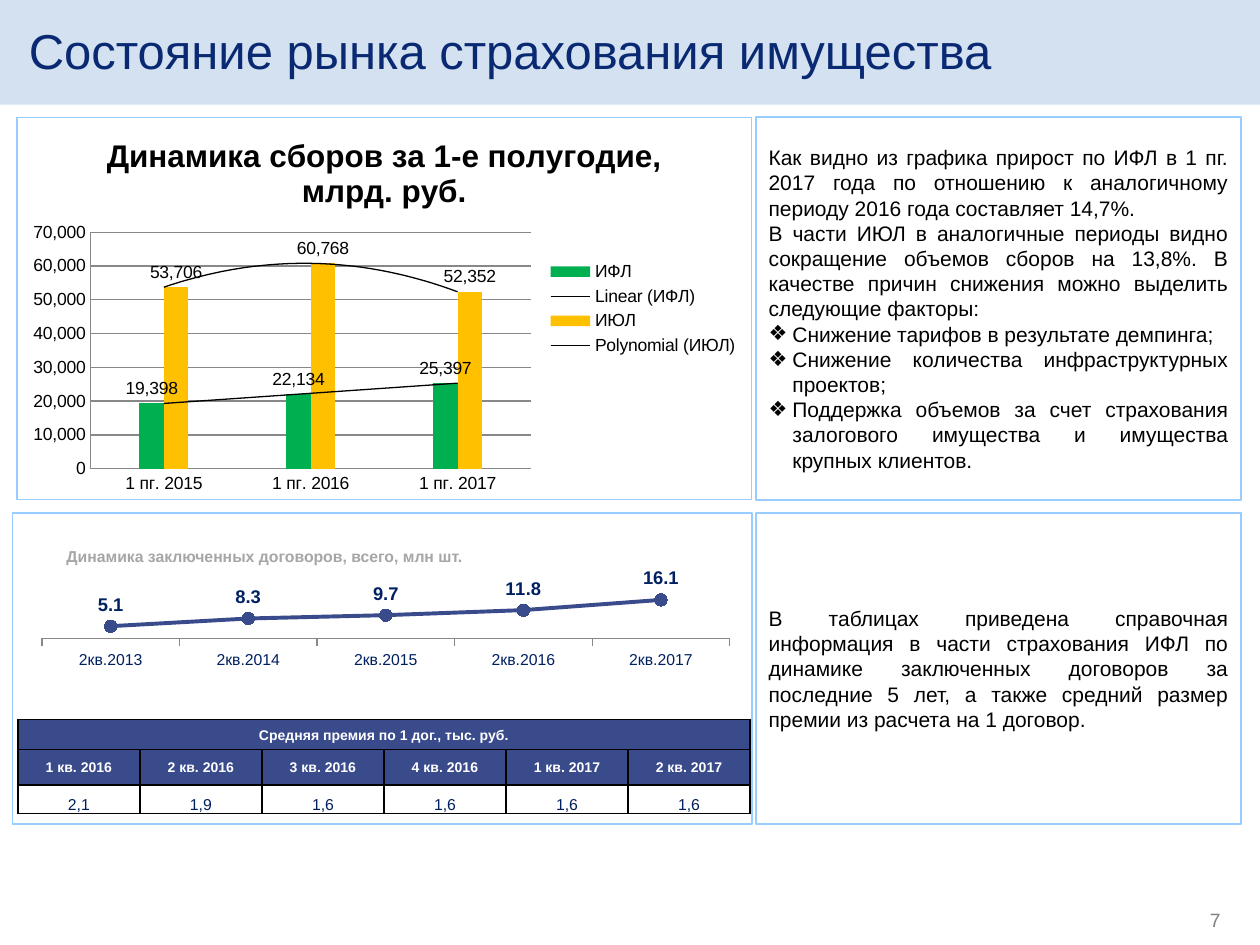
"""Build the slide on the state of the property insurance market."""
from lxml.etree import SubElement
from pptx import Presentation
from pptx.chart.data import CategoryChartData
from pptx.dml.color import RGBColor
from pptx.enum.chart import (XL_CHART_TYPE, XL_LABEL_POSITION, XL_LEGEND_POSITION,
                             XL_MARKER_STYLE, XL_TICK_MARK)
from pptx.enum.shapes import MSO_SHAPE
from pptx.enum.text import MSO_ANCHOR, MSO_AUTO_SIZE, PP_ALIGN
from pptx.oxml import parse_xml
from pptx.oxml.ns import nsdecls, qn
from pptx.util import Cm, Pt

FONT = "Arial"
COLORS = {
    "band": "D4E1F0", "title": "0A2973", "frame": "99CCFF", "header": "3A4B8C",
    "navy": "002060", "caption": "A6A6A6", "page": "808080", "axis": "888888",
    "black": "000000", "white": "FFFFFF", "green": "00B050", "amber": "FFC000",
}

TITLE = "Состояние рынка страхования имущества"
CAPTION = "Динамика заключенных договоров, всего, млн шт."
PAGE_NUMBER = "7"
BULLET = "❖"
COMMENTS = [
    ("Как видно из графика прирост по ИФЛ в 1 пг. 2017 года по отношению к "
     "аналогичному периоду 2016 года составляет 14,7%.", None),
    ("В части ИЮЛ в аналогичные периоды видно сокращение объемов сборов на 13,8%. "
     "В качестве причин снижения можно выделить следующие факторы:", None),
    ("Снижение тарифов в результате демпинга;", BULLET),
    ("Снижение количества инфраструктурных проектов;", BULLET),
    ("Поддержка объемов за счет страхования залогового имущества и имущества "
     "крупных клиентов.", BULLET),
]
REFERENCE = [
    ("В таблицах приведена справочная информация в части страхования ИФЛ по динамике "
     "заключенных договоров за последние 5 лет, а также средний размер премии из "
     "расчета на 1 договор.", None),
]

PREMIUM_TITLE = "Динамика сборов за 1-е полугодие,\nмлрд. руб."
PREMIUM_PERIODS = ["1 пг. 2015", "1 пг. 2016", "1 пг. 2017"]
PREMIUMS = [
    ("ИФЛ", (19398, 22134, 25397), "green", '<c:trendlineType val="linear"/>'),
    ("ИЮЛ", (53706, 60768, 52352), "amber",
     '<c:trendlineType val="poly"/><c:order val="2"/>'),
]
CONTRACT_PERIODS = ["2кв.2013", "2кв.2014", "2кв.2015", "2кв.2016", "2кв.2017"]
CONTRACTS = [("Series 1", (5.1, 8.3, 9.7, 11.8, 16.1))]

TABLE_TITLE = "Средняя премия по 1 дог., тыс. руб."
TABLE_COLUMNS = [("1 кв. 2016", "2,1"), ("2 кв. 2016", "1,9"), ("3 кв. 2016", "1,6"),
                 ("4 кв. 2016", "1,6"), ("1 кв. 2017", "1,6"), ("2 кв. 2017", "1,6")]
ROW_HEIGHTS = (0.61, 0.71, 0.58)
COLUMN_WIDTH = 2.46


def color(name):
    return RGBColor.from_string(COLORS[name])


def set_font(font, size, name="black", bold=False):
    font.name, font.size, font.bold = FONT, Pt(size), bold
    font.color.rgb = color(name)


def write(frame, text, size=12, name="black", bold=False, align=PP_ALIGN.LEFT,
          bullet=None, line_spacing=1.0, first=True):
    paragraph = frame.paragraphs[0] if first else frame.add_paragraph()
    paragraph.alignment = align
    paragraph.line_spacing = line_spacing
    paragraph.space_before = paragraph.space_after = Pt(0)
    run = paragraph.add_run()
    run.text = text
    set_font(run.font, size, name, bold)
    properties = paragraph._p.get_or_add_pPr()
    indent = Cm(0.48) if bullet else 0
    properties.set("marL", str(indent))
    properties.set("indent", str(-indent))
    if bullet:
        SubElement(properties, qn("a:buChar")).set("char", bullet)
    else:
        SubElement(properties, qn("a:buNone"))


def place(shape, left, top, width, height):
    shape.left, shape.top, shape.width, shape.height = map(Cm, (left, top, width, height))


def prepare(frame, margin=None, anchor=MSO_ANCHOR.TOP):
    frame.word_wrap, frame.auto_size, frame.vertical_anchor = True, MSO_AUTO_SIZE.NONE, anchor
    if margin is not None:
        frame.margin_left = frame.margin_right = Cm(margin)
        frame.margin_top = frame.margin_bottom = Cm(margin)


def outline(shape):
    shape.line.color.rgb = color("frame")
    shape.line.width = Pt(0.75)


def fill_comment(shape, entries, top, height):
    place(shape, 15.24, top, 9.78, height)
    outline(shape)
    prepare(shape.text_frame, anchor=MSO_ANCHOR.MIDDLE)
    for number, (text, bullet) in enumerate(entries):
        write(shape.text_frame, text, align=PP_ALIGN.JUSTIFY, bullet=bullet,
              first=number == 0)


def add_chart(slide, kind, periods, rows, position, plot_box, border=None):
    data = CategoryChartData()
    data.categories = periods
    for name, values, *_ in rows:
        data.add_series(name, values)
    chart = slide.shapes.add_chart(kind, *map(Cm, position), data).chart
    set_font(chart.font, 10)
    line = (f'<a:ln w="9525"><a:solidFill><a:srgbClr val="{border}"/></a:solidFill></a:ln>'
            if border else "<a:ln><a:noFill/></a:ln>")
    area = parse_xml(f'<c:spPr {nsdecls("c", "a")}><a:noFill/>{line}</c:spPr>')
    chart._chartSpace.find(qn("c:chart")).addnext(area)
    plot_area = chart._chartSpace.find(".//" + qn("c:plotArea"))
    for layout in plot_area.findall(qn("c:layout")):
        plot_area.remove(layout)
    sizes = "".join(f'<c:{key} val="{value}"/>' for key, value in zip("xywh", plot_box))
    plot_area.insert(0, parse_xml(
        f'<c:layout {nsdecls("c")}><c:manualLayout><c:layoutTarget val="inner"/>'
        f'<c:xMode val="edge"/><c:yMode val="edge"/>{sizes}</c:manualLayout></c:layout>'))
    chart.category_axis.format.line.color.rgb = color("axis")
    chart.category_axis.has_major_gridlines = False
    chart.value_axis.minimum_scale = 0
    return chart


def label_series(series, number_format, position, size, name="black", bold=False):
    labels = series.data_labels
    labels.show_value = True
    labels.number_format, labels.number_format_is_linked = number_format, False
    labels.position = position
    set_font(labels.font, size, name, bold)


def add_premium_chart(slide):
    chart = add_chart(slide, XL_CHART_TYPE.COLUMN_CLUSTERED, PREMIUM_PERIODS, PREMIUMS,
                      (0.33, 2.36, 14.83, 7.72), (0.1, 0.3, 0.6, 0.62), COLORS["frame"])
    chart.has_title = True
    for number, text in enumerate(PREMIUM_TITLE.split("\n")):
        write(chart.chart_title.text_frame, text, size=18, bold=True,
              align=PP_ALIGN.CENTER, first=number == 0)
    chart.has_legend = True
    chart.legend.position = XL_LEGEND_POSITION.RIGHT
    chart.legend.include_in_layout = False
    chart.category_axis.major_tick_mark = XL_TICK_MARK.NONE
    axis = chart.value_axis
    axis.major_tick_mark = XL_TICK_MARK.NONE
    axis.maximum_scale, axis.major_unit = 70000, 10000
    axis.tick_labels.number_format, axis.tick_labels.number_format_is_linked = "#,##0", False
    for line in (axis.format.line, axis.major_gridlines.format.line):
        line.color.rgb = color("axis")
    plot = chart.plots[0]
    plot.gap_width, plot.overlap, plot.vary_by_categories = 404, 0, False
    for series, (_, _, name, trend) in zip(plot.series, PREMIUMS):
        series.format.fill.solid()
        series.format.fill.fore_color.rgb = color(name)
        label_series(series, "#,##0", XL_LABEL_POSITION.OUTSIDE_END, 10)
        series._element.find(qn("c:cat")).addprevious(parse_xml(
            f'<c:trendline {nsdecls("c", "a")}><c:spPr><a:ln w="9525"><a:solidFill>'
            f'<a:srgbClr val="{COLORS["black"]}"/></a:solidFill></a:ln></c:spPr>{trend}'
            '<c:dispRSqr val="0"/><c:dispEq val="0"/></c:trendline>'))


def add_contract_chart(slide):
    chart = add_chart(slide, XL_CHART_TYPE.LINE_MARKERS, CONTRACT_PERIODS, CONTRACTS,
                      (0.25, 10.67, 14.91, 3.1), (0.04, 0.43, 0.93, 0.28))
    chart.has_title = chart.has_legend = False
    chart.category_axis.major_tick_mark = XL_TICK_MARK.OUTSIDE
    set_font(chart.category_axis.tick_labels.font, 9, "navy")
    chart.value_axis.maximum_scale = 18
    chart.value_axis.has_major_gridlines = False
    chart.value_axis.visible = False
    chart.plots[0].vary_by_categories = False
    series = chart.plots[0].series[0]
    series.smooth = False
    series.format.line.color.rgb = color("header")
    series.format.line.width = Pt(2.25)
    series.marker.style, series.marker.size = XL_MARKER_STYLE.CIRCLE, 7
    series.marker.format.fill.solid()
    series.marker.format.fill.fore_color.rgb = color("header")
    series.marker.format.line.color.rgb = color("header")
    label_series(series, "#,##0.0", XL_LABEL_POSITION.ABOVE, 10.5, "navy", True)


def add_premium_table(slide):
    count = len(TABLE_COLUMNS)
    rows = [[TABLE_TITLE] + [""] * (count - 1), *zip(*TABLE_COLUMNS)]
    table = slide.shapes.add_table(len(rows), count, Cm(0.36), Cm(14.5),
                                   Cm(COLUMN_WIDTH * count), Cm(sum(ROW_HEIGHTS))).table
    table.first_row = table.horz_banding = False
    for column in table.columns:
        column.width = Cm(COLUMN_WIDTH)
    for row_index, (texts, height) in enumerate(zip(rows, ROW_HEIGHTS)):
        table.rows[row_index].height = Cm(height)
        heading = row_index < 2
        for column_index, text in enumerate(texts):
            cell = table.cell(row_index, column_index)
            cell.margin_left = cell.margin_right = cell.margin_top = Cm(0.03)
            cell.margin_bottom = 0
            cell.vertical_anchor = MSO_ANCHOR.MIDDLE if heading else MSO_ANCHOR.BOTTOM
            properties = cell._tc.get_or_add_tcPr()
            for side in ("lnL", "lnR", "lnT", "lnB"):
                properties.append(parse_xml(
                    f'<a:{side} {nsdecls("a")} w="12700"><a:solidFill>'
                    f'<a:srgbClr val="{COLORS["black"]}"/></a:solidFill></a:{side}>'))
            if heading:
                cell.fill.solid()
                cell.fill.fore_color.rgb = color("header")
            else:
                cell.fill.background()
            if text:
                write(cell.text_frame, text, size=8 if heading else 9, bold=heading,
                      name="white" if heading else "navy", align=PP_ALIGN.CENTER)
    table.cell(0, 0).merge(table.cell(0, count - 1))


def main():
    presentation = Presentation()
    presentation.slide_width, presentation.slide_height = Cm(25.4), Cm(19.05)
    slide = presentation.slides.add_slide(presentation.slide_layouts[3])
    title, comments, reference = slide.placeholders

    band = slide.shapes.add_shape(MSO_SHAPE.RECTANGLE, 0, 0, Cm(25.4), Cm(2.11))
    band.shadow.inherit = False
    band.fill.solid()
    band.fill.fore_color.rgb = color("band")
    band.line.fill.background()
    title._element.addprevious(band._element)
    place(title, 0.58, 0.41, 23.29, 1.5)
    prepare(title.text_frame, margin=0)
    write(title.text_frame, TITLE, size=28, name="title")
    fill_comment(comments, COMMENTS, 2.36, 7.72)
    fill_comment(reference, REFERENCE, 10.34, 6.27)

    frame = slide.shapes.add_shape(MSO_SHAPE.FLOWCHART_PROCESS, Cm(0.25), Cm(10.34),
                                   Cm(14.91), Cm(6.27))
    frame.shadow.inherit = False
    frame.fill.background()
    outline(frame)
    caption = slide.shapes.add_textbox(Cm(1.09), Cm(10.67), Cm(12.8), Cm(0.86))
    prepare(caption.text_frame)
    write(caption.text_frame, CAPTION, size=9, name="caption", bold=True,
          line_spacing=Pt(17))
    add_contract_chart(slide)
    add_premium_table(slide)
    add_premium_chart(slide)
    page = slide.shapes.add_textbox(Cm(18.69), Cm(18.31), Cm(5.92), Cm(0.79))
    prepare(page.text_frame, margin=0)
    write(page.text_frame, PAGE_NUMBER, size=11, name="page", align=PP_ALIGN.RIGHT)
    presentation.save("out.pptx")


if __name__ == "__main__":
    main()
